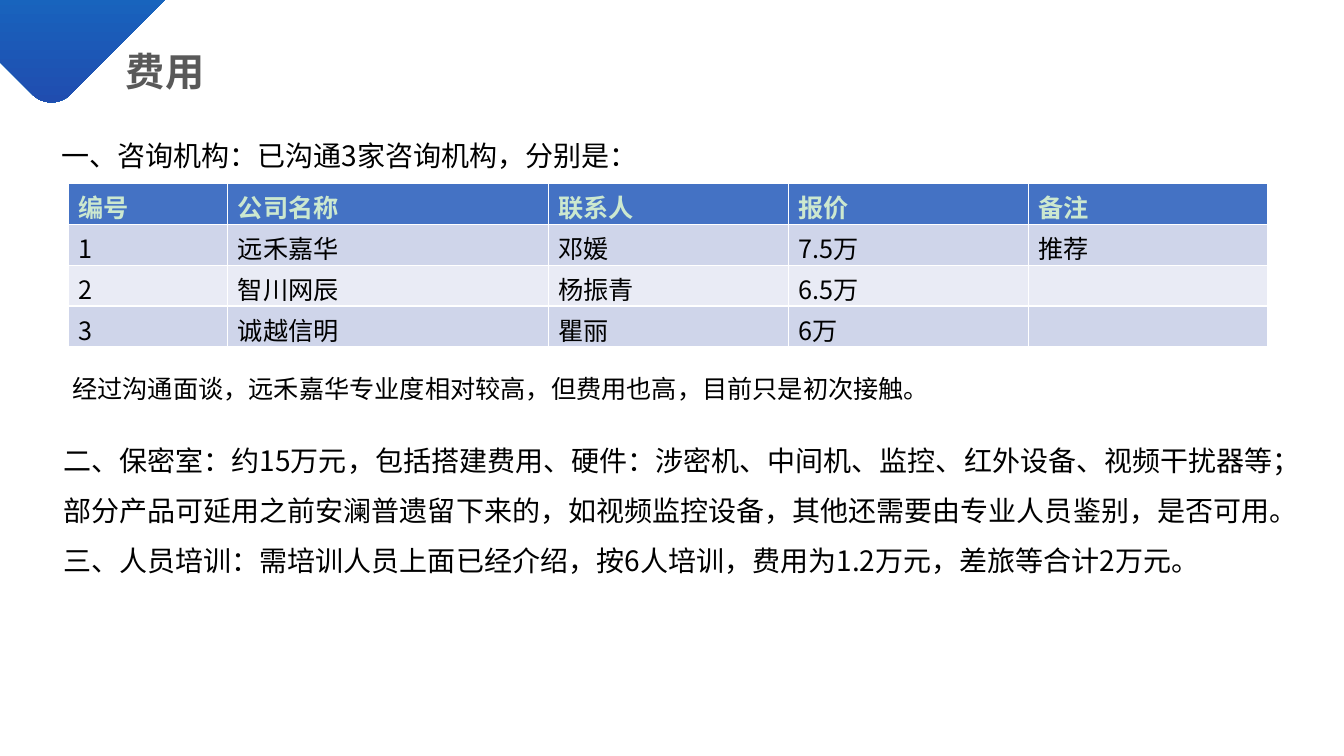
from lxml import etree
from pptx import Presentation
from pptx.dml.color import RGBColor
from pptx.enum.shapes import MSO_SHAPE
from pptx.enum.text import MSO_ANCHOR, MSO_AUTO_SIZE, PP_ALIGN
from pptx.oxml.ns import qn
from pptx.util import Pt

ROUNDED = MSO_SHAPE.ROUNDED_RECTANGLE
TOP = MSO_ANCHOR.TOP
NO_FIT = MSO_AUTO_SIZE.NONE
LEFT = PP_ALIGN.LEFT

FONT = "Noto Sans CJK SC"
BLACK = RGBColor(0x00, 0x00, 0x00)
GREY = RGBColor(0x59, 0x59, 0x59)
CYAN = RGBColor(0x00, 0xA3, 0xE4)
NAVY = RGBColor(0x21, 0x4B, 0xAE)
HEADER_BLUE = RGBColor(0x44, 0x72, 0xC4)
HEADER_TEXT = RGBColor(0xCC, 0xE8, 0xCF)
BAND_DARK = RGBColor(0xCF, 0xD5, 0xEA)
BAND_LIGHT = RGBColor(0xE9, 0xEB, 0xF5)

QUOTES = [
    ["编号", "公司名称", "联系人", "报价", "备注"],
    ["1", "远禾嘉华", "邓媛", "7.5万", "推荐"],
    ["2", "智川网辰", "杨振青", "6.5万", ""],
    ["3", "诚越信明", "瞿丽", "6万", ""],
]
COLUMN_WIDTHS = [113.76, 228.96, 171.36, 171.36, 171.36]
ROW_HEIGHT = 29.2

AGENCIES = ["一、咨询机构：已沟通3家咨询机构，分别是："]
REMARK = ["经过沟通面谈，远禾嘉华专业度相对较高，但费用也高，目前只是初次接触。"]
COSTS = [
    "二、保密室：约15万元，包括搭建费用、硬件：涉密机、中间机、监控、红外设备、视频干扰器等；",
    "部分产品可延用之前安澜普遗留下来的，如视频监控设备，其他还需要由专业人员鉴别，是否可用。",
    "三、人员培训：需培训人员上面已经介绍，按6人培训，费用为1.2万元，差旅等合计2万元。",
]


def write(p, text, size, color=BLACK, bold=False):
    r = p.add_run()
    r.text = text
    r.font.color.rgb = color
    for name, value in {"name": FONT, "size": Pt(size), "bold": bold}.items():
        setattr(r.font, name, value)
    etree.SubElement(r.font._element, qn("a:ea"), typeface=FONT)


def add_corner(s, left, top, side):
    sp = s.shapes.add_shape(ROUNDED, Pt(left), Pt(top), Pt(side), Pt(side))
    sp.adjustments[0] = 0.096
    sp.rotation = 45
    sp.shadow.inherit = False
    sp.line.fill.background()
    sp.fill.gradient()
    sp.fill.gradient_angle = 315
    for stop, position, color in zip(sp.fill.gradient_stops, (0, 1), (CYAN, NAVY)):
        stop.position = position
        stop.color.rgb = color


def set_title(s, left, top, width, height):
    sp = s.shapes.title
    box = {"left": left, "top": top, "width": width, "height": height}
    for name, value in box.items():
        setattr(sp, name, Pt(value))
    tf = sp.text_frame
    for name, value in {"vertical_anchor": TOP, "auto_size": NO_FIT}.items():
        setattr(tf, name, value)
    p = tf.paragraphs[0]
    p.alignment = LEFT
    write(p, "费用", 28, GREY, True)


def add_text(s, left, top, width, height, lines, size, spacing=1.0):
    tf = s.shapes.add_textbox(Pt(left), Pt(top), Pt(width), Pt(height)).text_frame
    tf.word_wrap = True
    for i, line in enumerate(lines):
        p = tf.add_paragraph() if i else tf.paragraphs[0]
        p.line_spacing = spacing
        write(p, line, size)


def add_quotes(s, left, top):
    table = s.shapes.add_table(
        len(QUOTES), len(COLUMN_WIDTHS), Pt(left), Pt(top),
        Pt(sum(COLUMN_WIDTHS)), Pt(ROW_HEIGHT * len(QUOTES))).table
    for column, width in zip(table.columns, COLUMN_WIDTHS):
        column.width = Pt(width)
    for i, values in enumerate(QUOTES):
        table.rows[i].height = Pt(ROW_HEIGHT)
        header = i == 0
        band = BAND_DARK if i % 2 else BAND_LIGHT
        for j, value in enumerate(values):
            cell = table.cell(i, j)
            cell.fill.solid()
            cell.fill.fore_color.rgb = HEADER_BLUE if header else band
            if value:
                write(cell.text_frame.paragraphs[0], value, 18,
                      HEADER_TEXT if header else BLACK, header)


def build_cost_slide(prs):
    s = prs.slides.add_slide(prs.slide_layouts[5])
    add_corner(s, -63.4, -160.6, 200.2)
    set_title(s, 82.8, 30.2, 386, 41)
    add_text(s, 36.7, 83.5, 890, 40, AGENCIES, 20, 1.5)
    add_quotes(s, 49, 131)
    add_text(s, 44.6, 262.8, 853, 29, REMARK, 18)
    add_text(s, 38.2, 301, 890, 116.6, COSTS, 20, 1.5)


def main():
    prs = Presentation()
    prs.slide_width, prs.slide_height = Pt(960), Pt(540)
    build_cost_slide(prs)
    prs.save("out.pptx")


if __name__ == "__main__":
    main()
